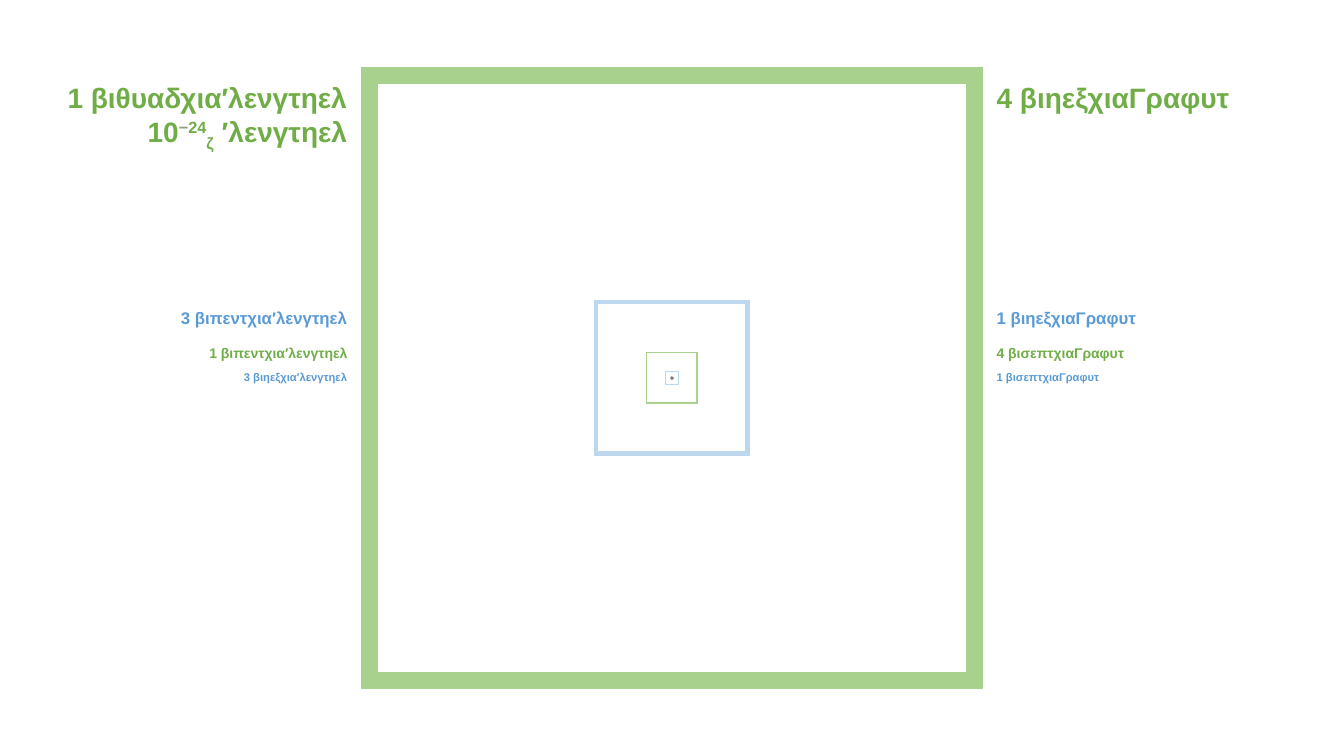
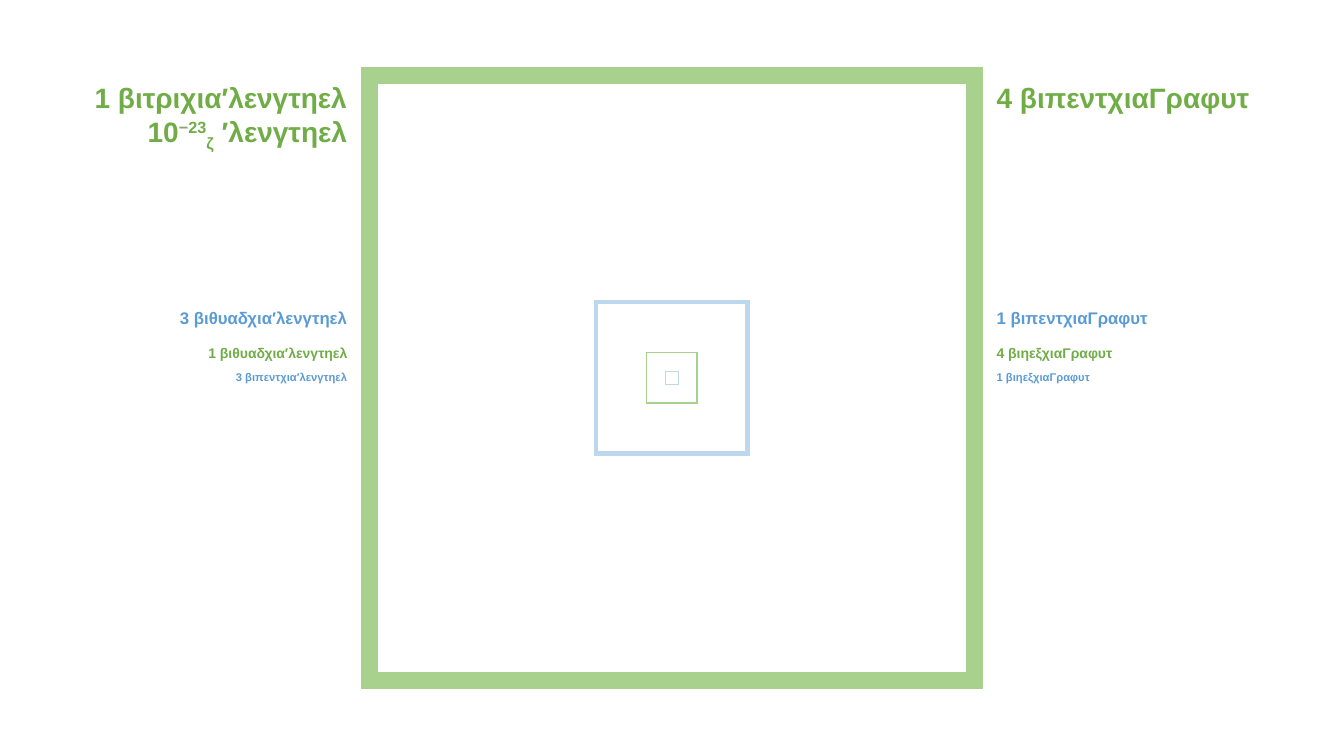
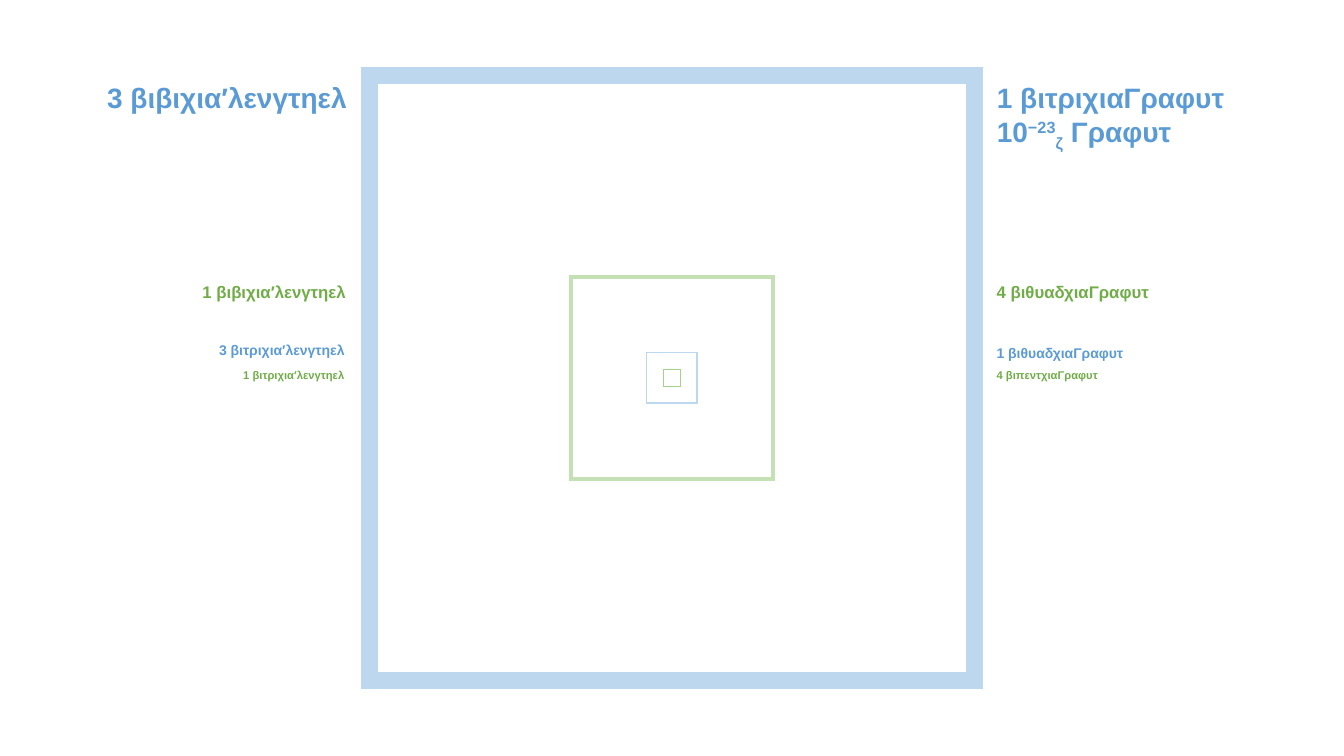
from copy import deepcopy
from dataclasses import dataclass

from lxml import etree
from pptx import Presentation
from pptx.dml.color import RGBColor
from pptx.enum.shapes import MSO_SHAPE
from pptx.enum.text import MSO_ANCHOR, MSO_AUTO_SIZE, PP_ALIGN
from pptx.oxml.ns import qn
from pptx.util import Pt

GREEN = RGBColor(0x70, 0xAD, 0x47)
BLUE = RGBColor(0x5B, 0x9B, 0xD5)
GREY_GREEN = RGBColor(0x89, 0xA2, 0x7A)
GREEN_LINE = RGBColor(0xA9, 0xD1, 0x8E)
PALE_GREEN_LINE = RGBColor(0xC5, 0xE0, 0xB4)
BLUE_LINE = RGBColor(0xBD, 0xD7, 0xEE)
ARROW_FILL = RGBColor(0xBF, 0xBF, 0xBF)
ARROW_LINE = RGBColor(0x80, 0x80, 0x80)
WHITE = RGBColor(0xFF, 0xFF, 0xFF)

FONT = "Arial"
WIDTH, HEIGHT = 960, 540
CENTER_X, CENTER_Y = WIDTH / 2, HEIGHT / 2
OUTER_SIDE = 432
LABEL_GAP = 8.8
TITLE_HEIGHT = 55.5
TITLE_ONLY = 5


@dataclass
class Level:
    """Look shared by the rings of one depth, from the outermost inwards."""
    stroke: float
    font_size: float
    label_width: float
    label_height: float
    label_lift: float


LEVELS = [
    Level(12, 20, 240, 31.5, 0),
    Level(3, 12, 141, 21.8, 0),
    Level(1, 10, 141, 19.4, 9.5),
    Level(0.25, 8, 141, 17, 4.2),
]


@dataclass
class Plate:
    """White plate behind a length label; inset and lift shift it from its usual place."""
    width: float
    inset: float
    lift: float = 0


@dataclass
class Ring:
    side: float
    outline: RGBColor
    ink: RGBColor
    length: str
    area: str
    plate: Plate = None


@dataclass
class Power:
    """Second line of the title: a power of ten and its unit."""
    exponent: str
    unit: str


def set_outline(shape, color, width):
    """Give the shape a line with sharp corners."""
    shape.shadow.inherit = False
    shape.line.color.rgb = color
    shape.line.width = Pt(width)
    miter = etree.SubElement(shape.line._get_or_add_ln(), qn("a:miter"))
    miter.set("lim", "800000")


def add_centered(slide, preset, width, height):
    return slide.shapes.add_shape(
        preset, Pt(CENTER_X - width / 2), Pt(CENTER_Y - height / 2),
        Pt(width), Pt(height))


def add_ring(slide, ring, level):
    square = add_centered(slide, MSO_SHAPE.RECTANGLE, ring.side, ring.side)
    square.fill.background()
    set_outline(square, ring.outline, level.stroke)


def add_power(paragraph, power, ink):
    parts = [("−", 30000), (power.exponent, 30000), ("ζ", -25000),
             (" " + power.unit, 0)]
    for text, baseline in parts:
        run = paragraph.add_run()
        run.text = text
        run._r.get_or_add_rPr().set("baseline", str(baseline))
        if text == "−" and ink == GREEN:
            run.font.color.rgb = GREY_GREEN


def write_label(label, text, align, size, ink, power=None):
    frame = label.text_frame
    frame.word_wrap = True
    frame.auto_size = MSO_AUTO_SIZE.SHAPE_TO_FIT_TEXT
    frame.vertical_anchor = MSO_ANCHOR.TOP
    paragraph = frame.paragraphs[0]
    paragraph.text = text + "\v10" if power else text
    if power:
        add_power(paragraph, power, ink)
    paragraph.alignment = align
    for run in paragraph.runs:
        font = run.font
        font.name, font.size, font.bold = FONT, Pt(size), True
        if font.color.type is None:
            font.color.rgb = ink
    for line_break in paragraph._p.findall(qn("a:br")):
        line_break.append(deepcopy(paragraph.runs[0]._r.rPr))


def add_plate(slide):
    plate = slide.shapes.add_shape(MSO_SHAPE.RECTANGLE, 0, 0, 0, 0)
    plate.shadow.inherit = False
    plate.fill.solid()
    plate.fill.fore_color.rgb = WHITE
    plate.line.fill.background()
    return plate


def add_ring_labels(slide, ring, level, power=None):
    """Put the length left and the area right of the outermost ring."""
    top = CENTER_Y - ring.side / 2 - level.label_lift
    reach = OUTER_SIDE / 2 + LABEL_GAP
    for text, align in ((ring.length, PP_ALIGN.RIGHT), (ring.area, PP_ALIGN.LEFT)):
        is_length = align == PP_ALIGN.RIGHT
        plate = ring.plate if is_length else None
        is_title = power is not None and text.endswith(power.unit)
        if is_title:
            label = slide.shapes.title
        elif plate:
            label = add_plate(slide)
        else:
            label = slide.shapes.add_textbox(0, 0, 0, 0)
        width = plate.width if plate else level.label_width
        inset, lift = (plate.inset, plate.lift) if plate else (0, 0)
        left = CENTER_X - reach - inset - width if is_length else CENTER_X + reach
        label.left, label.top = Pt(left), Pt(top - lift)
        label.width = Pt(width)
        label.height = Pt(TITLE_HEIGHT if is_title else level.label_height)
        write_label(label, text, align, level.font_size, ring.ink,
                    power if is_title else None)


def add_center_arrow(slide):
    arrow = add_centered(slide, MSO_SHAPE.LEFT_RIGHT_ARROW, 1.5, 0.3)
    arrow.fill.solid()
    arrow.fill.fore_color.rgb = ARROW_FILL
    set_outline(arrow, ARROW_LINE, 1)


def add_scale_slide(deck, rings, power):
    slide = deck.slides.add_slide(deck.slide_layouts[TITLE_ONLY])
    for depth, (ring, level) in enumerate(zip(rings, LEVELS)):
        add_ring(slide, ring, level)
        add_ring_labels(slide, ring, level, power if depth == 0 else None)
    return slide


def green_first(labels):
    """Rings of a slide whose outermost square is green."""
    looks = [(432, GREEN_LINE, GREEN), (108, BLUE_LINE, BLUE),
             (36, GREEN_LINE, GREEN), (9, BLUE_LINE, BLUE)]
    return [Ring(*look, *pair) for look, pair in zip(looks, labels)]


def main():
    deck = Presentation()
    deck.slide_width, deck.slide_height = Pt(WIDTH), Pt(HEIGHT)

    smallest = add_scale_slide(deck, green_first([
        ("1 βιθυαδχια′λενγτηελ", "4 βιηεξχιαΓραφυτ"),
        ("3 βιπεντχια′λενγτηελ", "1 βιηεξχιαΓραφυτ"),
        ("1 βιπεντχια′λενγτηελ", "4 βισεπτχιαΓραφυτ"),
        ("3 βιηεξχια′λενγτηελ", "1 βισεπτχιαΓραφυτ"),
    ]), Power("24", "′λενγτηελ"))
    add_center_arrow(smallest)

    add_scale_slide(deck, green_first([
        ("1 βιτριχια′λενγτηελ", "4 βιπεντχιαΓραφυτ"),
        ("3 βιθυαδχια′λενγτηελ", "1 βιπεντχιαΓραφυτ"),
        ("1 βιθυαδχια′λενγτηελ", "4 βιηεξχιαΓραφυτ"),
        ("3 βιπεντχια′λενγτηελ", "1 βιηεξχιαΓραφυτ"),
    ]), Power("23", "′λενγτηελ"))

    add_scale_slide(deck, [
        Ring(432, BLUE_LINE, BLUE, "3 βιβιχια′λενγτηελ", "1 βιτριχιαΓραφυτ",
             Plate(201, 0.3)),
        Ring(144, PALE_GREEN_LINE, GREEN, "1 βιβιχια′λενγτηελ", "4 βιθυαδχιαΓραφυτ",
             Plate(126, 1)),
        Ring(36, BLUE_LINE, BLUE, "3 βιτριχια′λενγτηελ", "1 βιθυαδχιαΓραφυτ",
             Plate(107.3, 2, 2)),
        Ring(12, GREEN_LINE, GREEN, "1 βιτριχια′λενγτηελ", "4 βιπεντχιαΓραφυτ",
             Plate(90, 2)),
    ], Power("23", "Γραφυτ"))

    deck.save("out.pptx")


if __name__ == "__main__":
    main()
